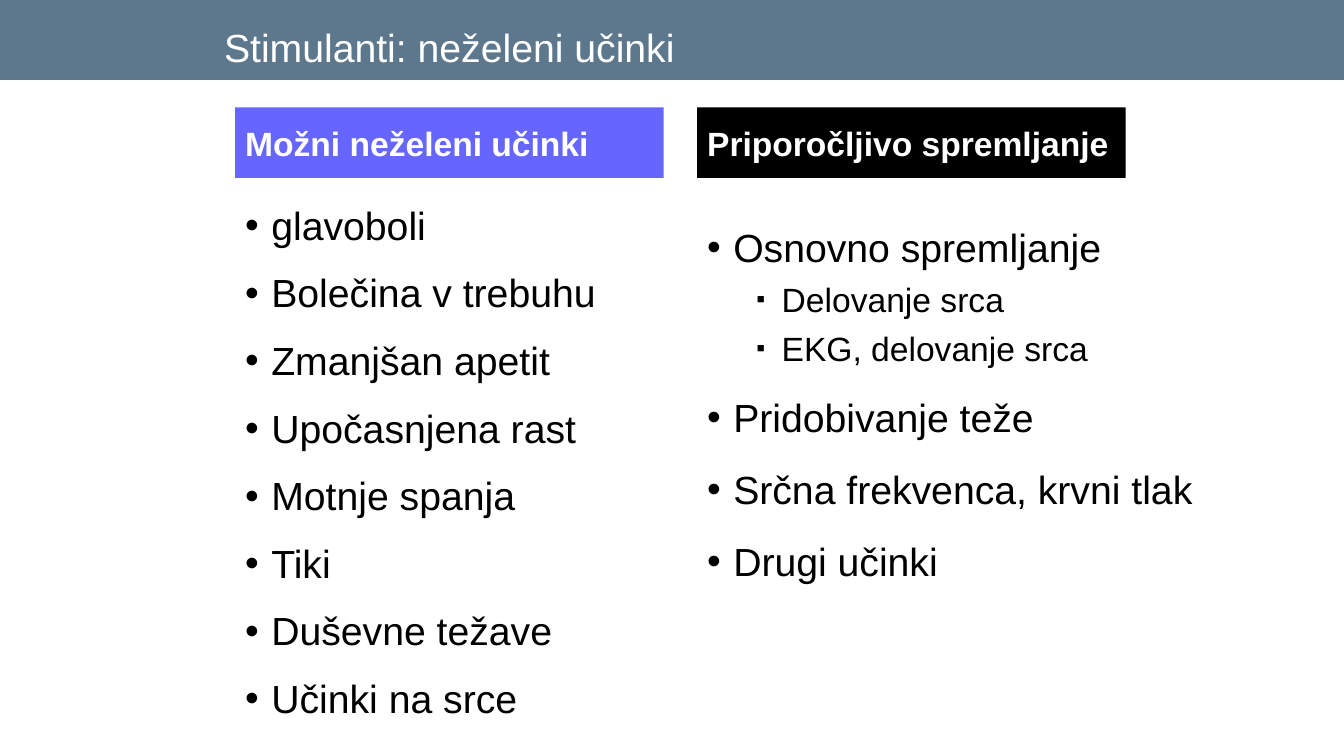
from lxml.etree import SubElement
from pptx import Presentation
from pptx.dml.color import RGBColor
from pptx.enum.shapes import MSO_SHAPE
from pptx.enum.text import MSO_ANCHOR, PP_ALIGN
from pptx.oxml.ns import qn
from pptx.util import Inches, Pt

COLORS = {"band": "5D778D", "effects": "6666FF", "monitoring": "000000",
          "light": "FFFFFF", "text": "000000"}
COLS, ROWS = 160, 90
WIDTH, HEIGHT = Inches(13.333), Inches(7.5)

# Text format of each bullet level; indents in inches
LEVELS = [
    {"char": "•", "size": 28, "before": 18, "left": 0.26, "hang": 0.26, "scale": 100},
    {"char": "▪", "size": 24, "before": 6, "left": 0.74, "hang": 0.25, "scale": 75},
]
EFFECTS = [(0, t) for t in (
    "glavoboli", "Bolečina v trebuhu", "Zmanjšan apetit", "Upočasnjena rast",
    "Motnje spanja", "Tiki", "Duševne težave", "Učinki na srce")]
MONITORING = [
    (0, "Osnovno spremljanje"), (1, "Delovanje srca"), (1, "EKG, delovanje srca"),
    (0, "Pridobivanje teže"), (0, "Srčna frekvenca, krvni tlak"), (0, "Drugi učinki")]


def grid(col, row, cols, rows):
    """Turn a box in grid units into slide lengths."""
    return (int(WIDTH * col / COLS), int(HEIGHT * row / ROWS),
            int(WIDTH * cols / COLS), int(HEIGHT * rows / ROWS))


def add_text(p, text, size, color, bold=False):
    p.alignment = PP_ALIGN.LEFT
    r = p.add_run()
    r.text = text
    r.font.color.rgb = RGBColor.from_string(COLORS[color])
    for name, value in {"name": "Arial", "size": Pt(size), "bold": bold}.items():
        setattr(r.font, name, value)


def add_rect(slide, box, color):
    sp = slide.shapes.add_shape(MSO_SHAPE.RECTANGLE, *grid(*box))
    sp.shadow.inherit = False
    sp.fill.solid()
    sp.fill.fore_color.rgb = RGBColor.from_string(COLORS[color])
    sp.line.fill.background()
    return sp


def add_text_box(slide, box, anchor):
    tf = slide.shapes.add_textbox(*grid(*box)).text_frame
    tf.word_wrap = True
    tf.vertical_anchor = anchor
    return tf


def add_bullet(p, level):
    pPr = p._p.get_or_add_pPr()
    pPr.set("marL", str(Inches(level["left"])))
    pPr.set("indent", str(-Inches(level["hang"])))
    clr = SubElement(pPr, qn("a:buClr"))
    SubElement(clr, qn("a:srgbClr"), val=COLORS["text"])
    SubElement(pPr, qn("a:buSzPct"), val=str(level["scale"] * 1000))
    SubElement(pPr, qn("a:buFont"), typeface="Arial")
    SubElement(pPr, qn("a:buChar"), char=level["char"])


def add_title(slide, box, text):
    col, row, cols, rows = box
    add_rect(slide, box, "band")
    tf = add_text_box(slide, (col + 25.5, row + 0.4, 107, rows - 0.9), MSO_ANCHOR.BOTTOM)
    add_text(tf.paragraphs[0], text, 28, "light")


def add_column(slide, box, heading, color, items, drop, spacing):
    """Heading bar with a bulleted list, drop rows below the top of the box."""
    col, row, cols, rows = box
    # Heading
    tf = add_rect(slide, (col, row, 51, 8.4), color).text_frame
    tf.word_wrap = True
    tf.vertical_anchor = MSO_ANCHOR.MIDDLE
    add_text(tf.paragraphs[0], heading, 24, "light", bold=True)
    # List
    tf = add_text_box(slide, (col, row + drop, cols, rows - drop), MSO_ANCHOR.TOP)
    for i, (depth, text) in enumerate(items):
        level = LEVELS[depth]
        p = tf.add_paragraph() if i else tf.paragraphs[0]
        formats = {"level": depth, "line_spacing": spacing,
                   "space_before": Pt(level["before"] if i else 0)}
        for name, value in formats.items():
            setattr(p, name, value)
        add_bullet(p, level)
        add_text(p, text, level["size"], "text")


def main():
    prs = Presentation()
    prs.slide_width, prs.slide_height = WIDTH, HEIGHT
    slide = prs.slides.add_slide(prs.slide_layouts[6])
    add_title(slide, (0, 0, COLS, 9.5), "Stimulanti: neželeni učinki")
    add_column(slide, (28, 12.8, 51, 58.2), "Možni neželeni učinki",
               "effects", EFFECTS, 11.2, 0.9)
    add_column(slide, (83, 12.8, 66, 60.2), "Priporočljivo spremljanje",
               "monitoring", MONITORING, 13.2, 1.0)
    prs.save("out.pptx")


if __name__ == "__main__":
    main()
